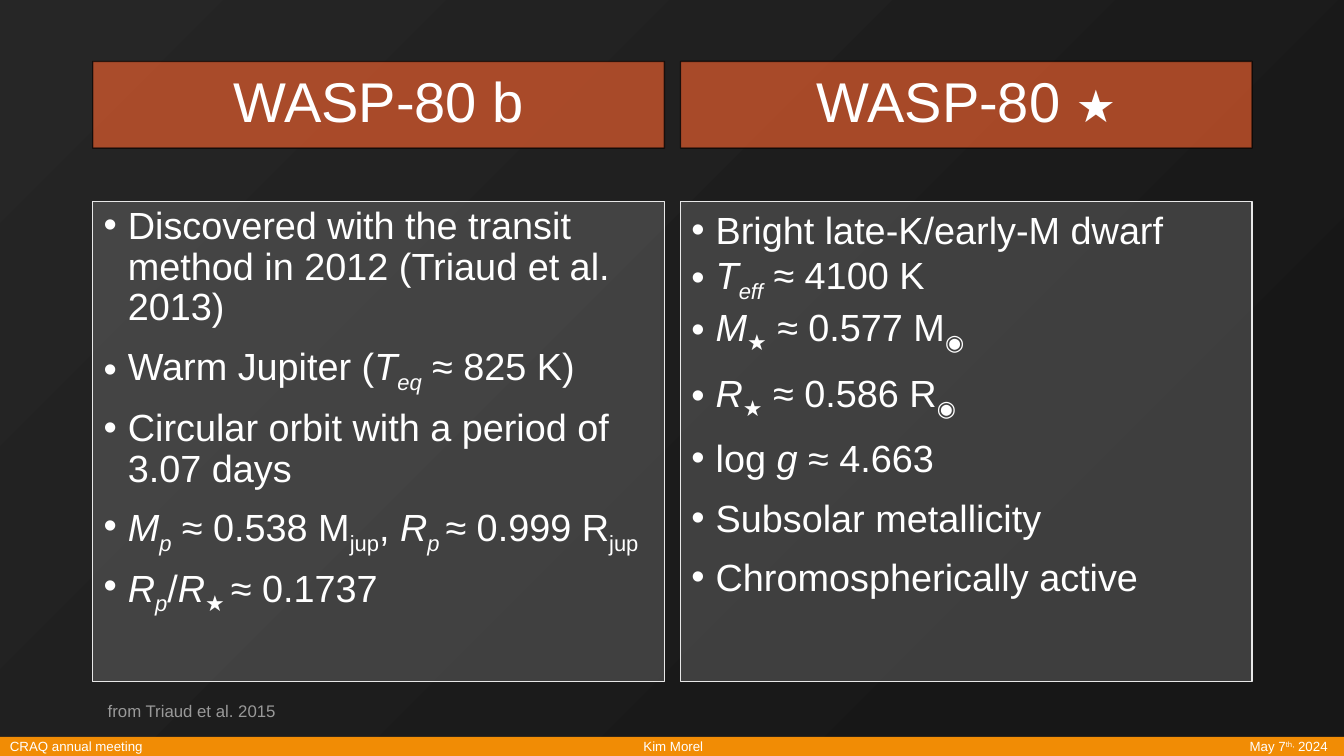
from lxml.etree import SubElement as Sub
from pptx import Presentation
from pptx.dml.color import RGBColor as Rgb
from pptx.enum.shapes import MSO_SHAPE as Kind
from pptx.enum.text import MSO_ANCHOR as Anchor, MSO_AUTO_SIZE as Fit, PP_ALIGN as Align
from pptx.oxml.ns import qn
from pptx.util import Pt

SCALE = 9144
WIDE, HIGH = 1333, 750
COLS = (92, 675)
COL_W = 567
HEAD = (61, 86)
BODY = (200, 476)
ITAL, SUB, BOTH, SUP = "i", "b", "ib", "p"


def tint(code):
    return Rgb.from_string(code)


class Deck:
    """Hold the style and the current slide."""

    font = "Arial"
    white = "FFFFFF"

    def __init__(self):
        self.file = Presentation()
        self.file.slide_width = WIDE * SCALE
        self.file.slide_height = HIGH * SCALE
        self.slide = self.file.slides.add_slide(self.file.slide_layouts[5])

    def back(self, start, end):
        fill = self.slide.background.fill
        fill.gradient()
        fill.gradient_angle = 315
        for stop, code, place in zip(fill.gradient_stops, (start, end), (0, 0.85)):
            stop.color.rgb = tint(code)
            stop.position = place

    def fade(self, fill, part):
        color = fill._xPr.find(qn("a:solidFill"))[0]
        Sub(color, qn("a:alpha"), val=str(part * 1000))

    def place(self, shape, *area):
        shape.left, shape.top, shape.width, shape.height = [n * SCALE for n in area]

    def paint(self, shape, code, part=None, edge=None, clear=None):
        shape.fill.solid()
        shape.fill.fore_color.rgb = tint(code)
        if part:
            self.fade(shape.fill, part)
        if not edge:
            shape.line.fill.background()
            return
        shape.line.color.rgb = tint(edge)
        shape.line.width = Pt(1)
        if clear:
            self.fade(shape.line.fill, clear)

    def rect(self, *area):
        shape = self.slide.shapes.add_shape(Kind.RECTANGLE, *[n * SCALE for n in area])
        shape.shadow.inherit = False
        return shape

    def frame(self, shape, anchor, side=10, edge=5):
        text = shape.text_frame
        text.word_wrap = True
        text.auto_size = Fit.NONE
        text.vertical_anchor = anchor
        text.margin_left = text.margin_right = side * SCALE
        text.margin_top = text.margin_bottom = edge * SCALE
        return text

    def label(self, par, parts, size, code=white):
        for part in parts:
            words, style = (part, "") if isinstance(part, str) else part
            run = par.add_run()
            run.text = words
            run.font.name = self.font
            run.font.size = Pt(size)
            run.font.color.rgb = tint(code)
            if ITAL in style:
                run.font.italic = True
            if SUB in style or SUP in style:
                shift = "-25000" if SUB in style else "30000"
                run._r.get_or_add_rPr().set("baseline", shift)

    def head(self, shape, col, parts):
        self.place(shape, COLS[col], HEAD[0], COL_W, HEAD[1])
        self.paint(shape, "FF652F", 61, "000000", 65)
        par = self.frame(shape, Anchor.MIDDLE).paragraphs[0]
        par.alignment = Align.CENTER
        par.line_spacing = 0.9
        self.label(par, parts, 40)

    def bullet(self, par):
        props = par._p.get_or_add_pPr()
        props.set("marL", str(25 * SCALE))
        props.set("indent", str(-24 * SCALE))
        Sub(Sub(props, qn("a:buClr")), qn("a:srgbClr"), val=self.white)
        Sub(props, qn("a:buFont"), typeface=self.font)
        Sub(props, qn("a:buChar"), char="•")

    def body(self, col, rows):
        shape = self.rect(COLS[col], BODY[0], COL_W, BODY[1])
        self.paint(shape, "747474", 42, "E8E8E8")
        text = self.frame(shape, Anchor.TOP)
        for i, (space, gap, parts) in enumerate(rows):
            par = text.add_paragraph() if i else text.paragraphs[0]
            self.bullet(par)
            par.alignment = Align.LEFT
            par.line_spacing = space
            par.space_before = Pt(gap)
            self.label(par, parts, 27)

    def foot(self, parts):
        shape = self.rect(0, 731, WIDE, 19)
        self.paint(shape, "F18C05")
        par = self.frame(shape, Anchor.MIDDLE).paragraphs[0]
        par.alignment = Align.LEFT
        tabs = Sub(par._p.get_or_add_pPr(), qn("a:tabLst"))
        for pos, side in ((658, "ctr"), (1307, "r")):
            Sub(tabs, qn("a:tab"), pos=str(pos * SCALE), algn=side)
        self.label(par, parts, 9.5)

    def note(self, words):
        area = [n * SCALE for n in (97, 685, 384, 32)]
        box = self.slide.shapes.add_textbox(*area)
        text = self.frame(box, Anchor.TOP, edge=10)
        self.label(text.paragraphs[0], [words], 12, "999999")


PLANET = [
    (0.9, 0, ["Discovered with the transit method in 2012 (Triaud et al. 2013)"]),
    (1.0, 10, ["Warm Jupiter (", ("T", ITAL), ("eq", BOTH), " ≈ 825 K)"]),
    (0.9, 10, ["Circular orbit with a period of 3.07 days"]),
    (0.9, 10, [("M", ITAL), ("p", BOTH), " ≈ 0.538 M", ("jup", SUB), ", ",
               ("R", ITAL), ("p ", BOTH), "≈ 0.999 R", ("jup", SUB)]),
    (0.9, 10, [("R", ITAL), ("p", BOTH), "/", ("R", ITAL), ("★ ", BOTH), "≈ 0.1737"]),
]
STAR = [
    (1.0, 0, ["Bright late-K/early-M dwarf"]),
    (1.0, 0, [("T", ITAL), ("eff", BOTH), " ≈ 4100 K"]),
    (1.0, 0, [("M", ITAL), ("★", BOTH), " ≈ 0.577 M", ("◉", SUB)]),
    (1.0, 10, [("R", ITAL), ("★", BOTH), " ≈ 0.586 R", ("◉", SUB)]),
    (1.0, 10, ["log ", ("g", ITAL), " ≈ 4.663"]),
    (1.0, 10, ["Subsolar metallicity"]),
    (1.0, 10, ["Chromospherically active"]),
]


def main():
    deck = Deck()
    deck.back("262626", "171717")
    deck.head(deck.slide.shapes.title, 0, ["WASP-80 b"])
    deck.body(0, PLANET)
    deck.body(1, STAR)
    star = deck.rect(COLS[1], HEAD[0], COL_W, HEAD[1])
    deck.head(star, 1, ["WASP-80 ", "★"])
    star.text_frame.paragraphs[0].runs[1].font.size = Pt(32)
    deck.foot(["CRAQ annual meeting\tKim Morel\tMay 7", ("th,", SUP), " 2024"])
    deck.note("from Triaud et al. 2015")
    deck.file.save("out.pptx")


if __name__ == "__main__":
    main()
